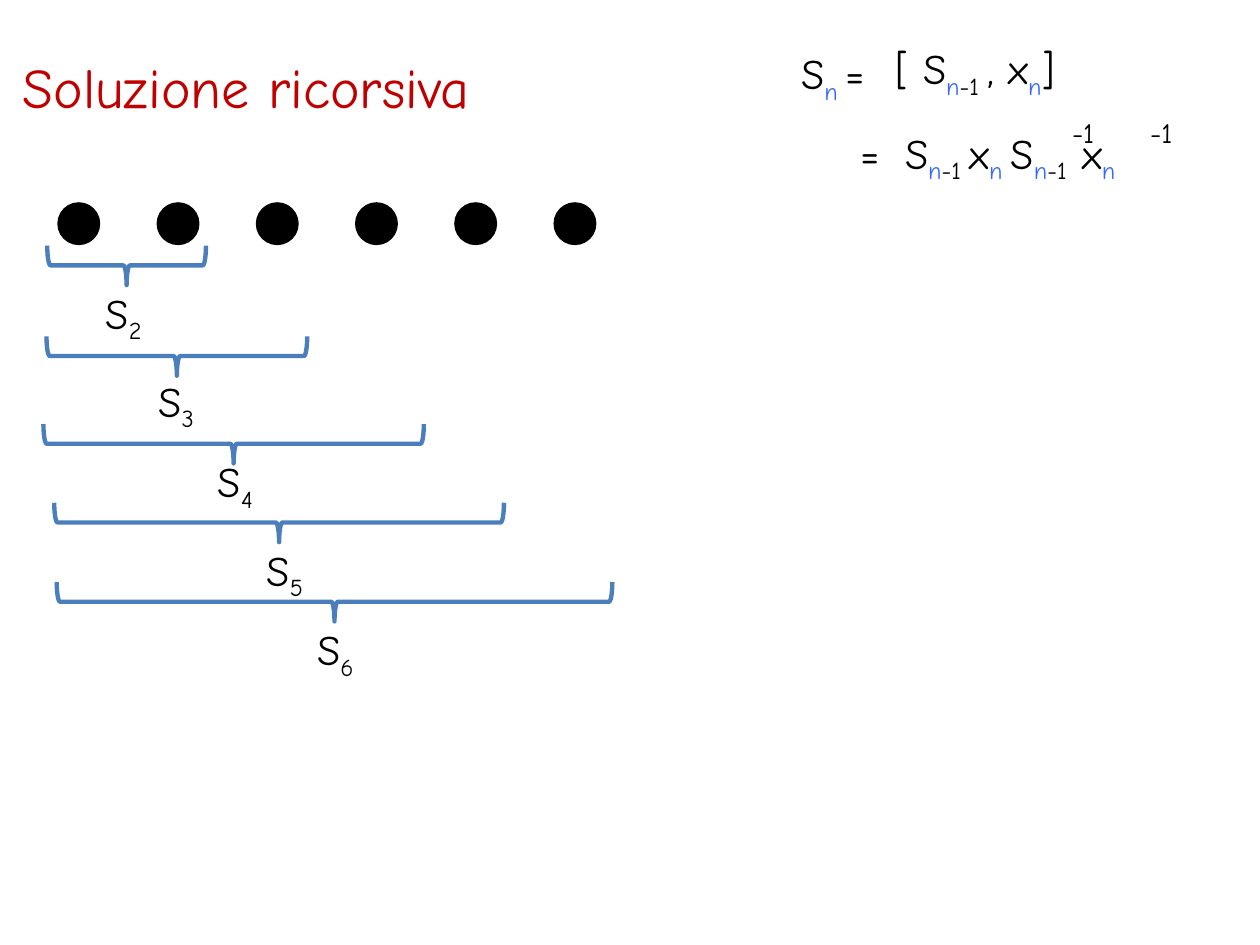
from pptx import Presentation
from pptx.dml.color import RGBColor
from pptx.enum.shapes import MSO_SHAPE
from pptx.enum.text import MSO_ANCHOR, MSO_AUTO_SIZE
from pptx.util import Pt

FONT = "Comic Neue"
COLORS = {"title": "C00000", "text": "000000", "index": "3366FF",
          "dot": "000000", "brace": "4B7EBC"}
BRACE_DEPTH = 22.5

# Brace left, top and width, then label left and top, for S2 to S6
SPANS = [
    (27, 140.4, 90.7, 53.3, 160.6),
    (26.6, 192.2, 149, 83.5, 211),
    (24.8, 242.3, 217.4, 117.4, 257),
    (31, 287.3, 257, 145.4, 307.4),
    (32.4, 332.6, 317.5, 174.2, 352.8),
]


def rgb(name):
    return RGBColor.from_string(COLORS[name])


def add_run(paragraph, text, size=24, color="text", subscript=False, spacing=0):
    """Add a run; spacing is the extra width after each character, in points."""
    run = paragraph.add_run()
    run.text = text
    run.font.name = FONT
    run.font.size = Pt(size)
    run.font.color.rgb = rgb(color)
    properties = run._r.get_or_add_rPr()
    if subscript:
        properties.set("baseline", "-25000")
    if spacing:
        properties.set("spc", str(round(spacing * 100)))


def add_text_box(slide, left, top, width, height):
    """Add an empty text box and return its text frame."""
    box = slide.shapes.add_textbox(Pt(left), Pt(top), Pt(width), Pt(height))
    box.text_frame.word_wrap = True
    return box.text_frame


def add_line_of_text(slide, left, top, width, height=36):
    """Add a text box that grows with its text and return its paragraph."""
    frame = add_text_box(slide, left, top, width, height)
    frame.auto_size = MSO_AUTO_SIZE.SHAPE_TO_FIT_TEXT
    return frame.paragraphs[0]


def add_title(slide, left, top, width, height):
    frame = add_text_box(slide, left, top, width, height)
    frame.vertical_anchor = MSO_ANCHOR.MIDDLE
    add_run(frame.paragraphs[0], "Soluzione ricorsiva", 32, "title")


def add_index(paragraph, text="n"):
    add_run(paragraph, text, color="index", subscript=True)


def add_previous_index(paragraph, spacing=0):
    """Add the subscript n-1 and the gap after it."""
    add_index(paragraph)
    add_run(paragraph, "-1", subscript=True)
    add_run(paragraph, " ", subscript=True, spacing=spacing)


def add_formula(slide, left, top):
    commutator = add_line_of_text(slide, left + 54, top, 193)
    add_run(commutator, "[ S")
    add_previous_index(commutator)
    add_run(commutator, ", x")
    add_index(commutator)
    add_run(commutator, "]")

    name = add_line_of_text(slide, left, top + 2.9, 79.2)
    add_run(name, "S")
    add_index(name, "n ")
    add_run(name, "=")

    expansion = add_line_of_text(slide, left + 33.8, top + 48.2, 215.3)
    add_run(expansion, "=")
    add_run(expansion, " ", spacing=6.5)
    add_run(expansion, "S")
    add_previous_index(expansion)
    add_run(expansion, "x")
    add_index(expansion, "n ")
    add_run(expansion, "S")
    add_previous_index(expansion, spacing=4)
    add_run(expansion, "x")
    add_index(expansion)

    for offset in (154.8, 199.4):
        exponent = add_line_of_text(slide, left + offset, top + 41.7, 44.6, 26.6)
        add_run(exponent, "-1", 16)


def add_dots(slide, left, top, count=6, diameter=22.5, pitch=56.7):
    for index in range(count):
        dot = slide.shapes.add_shape(
            MSO_SHAPE.OVAL, Pt(left + index * pitch), Pt(top),
            Pt(diameter), Pt(diameter))
        dot.shadow.inherit = False
        dot.fill.solid()
        dot.fill.fore_color.rgb = rgb("dot")
        dot.line.color.rgb = rgb("dot")
        dot.line.width = Pt(2)


def add_brace(slide, left, top, width):
    """Add a brace that opens upward, turned about the centre of its box."""
    brace = slide.shapes.add_shape(
        MSO_SHAPE.LEFT_BRACE,
        Pt(left + (width - BRACE_DEPTH) / 2), Pt(top + (BRACE_DEPTH - width) / 2),
        Pt(BRACE_DEPTH), Pt(width))
    brace.rotation = 270
    brace.shadow.inherit = False
    brace.fill.background()
    brace.line.color.rgb = rgb("brace")
    brace.line.width = Pt(2.5)


def add_spans(slide):
    for number, (left, top, width, label_left, label_top) in enumerate(SPANS, 2):
        add_brace(slide, left, top, width)
        label = add_line_of_text(slide, label_left, label_top, 51.8)
        add_run(label, "S")
        add_run(label, str(number), subscript=True)


def main():
    presentation = Presentation()
    presentation.slide_width = Pt(720)
    presentation.slide_height = Pt(540)
    slide = presentation.slides.add_slide(presentation.slide_layouts[6])
    add_title(slide, 5.8, 4.3, 694.8, 90)
    add_formula(slide, 450.7, 20.9)
    add_dots(slide, 33.8, 116.6)
    add_spans(slide)
    presentation.save("out.pptx")


if __name__ == "__main__":
    main()
